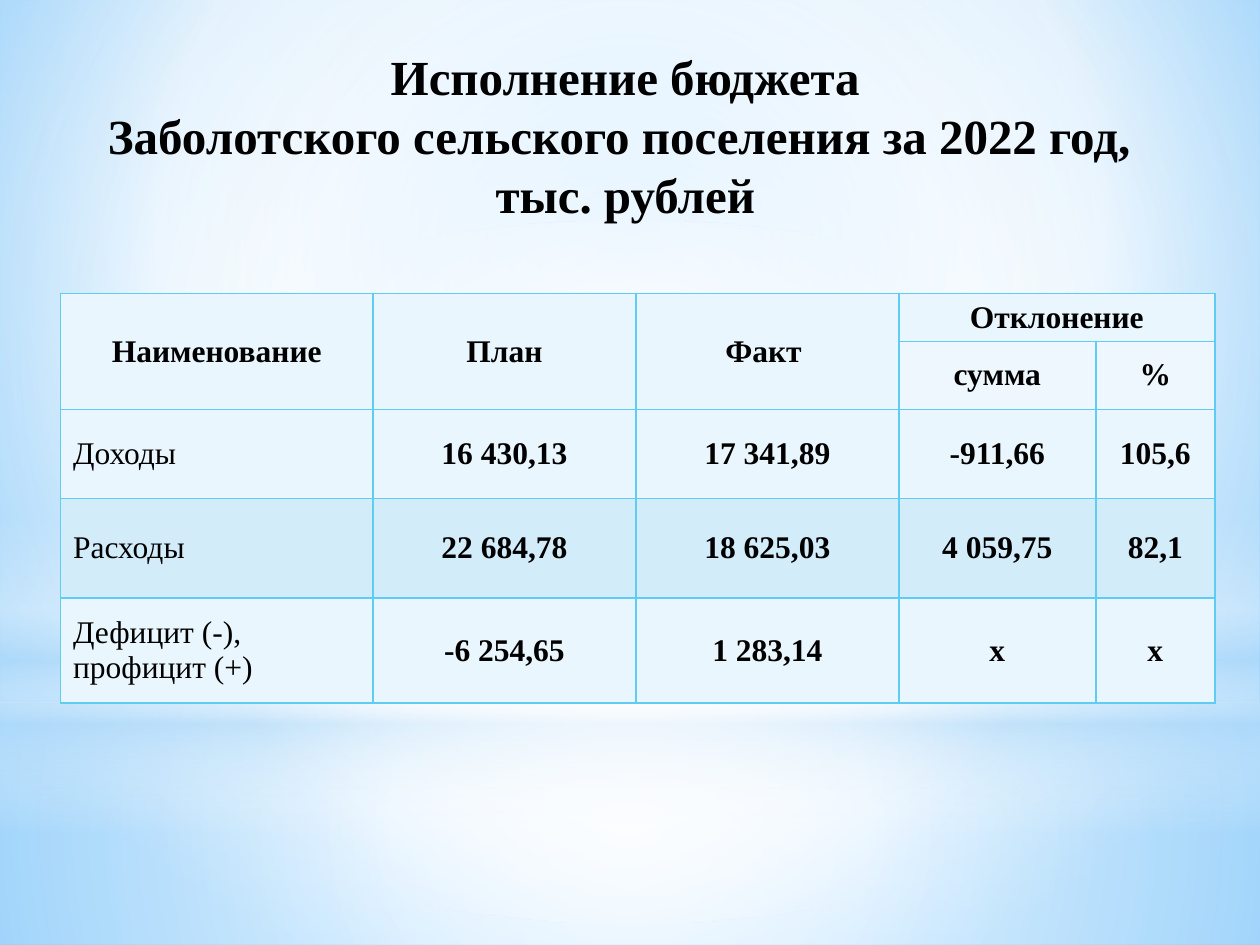
from dataclasses import dataclass
from itertools import product

from lxml import etree
from pptx import Presentation
from pptx import util as u
from pptx.dml.color import RGBColor
from pptx.enum import shapes, text
from pptx.oxml.ns import qn

COLORS = {
    "ink": "000000", "white": "FFFFFF", "haze": "B4DCFA", "sky": "9ED5FF",
    "azure": "5BB9FF", "border": "5ECCF3", "light": "EAF6FD",
    "subhead": "EDF7FD", "band": "D2ECFA",
}
FONT = "Times New Roman"
CENTER = (50, 50, 50, 50)


@dataclass(frozen=True)
class Stop:
    position: int
    color: str
    alpha: int = 100


@dataclass(frozen=True)
class Gradient:
    stops: tuple[Stop, ...]
    focus: tuple[int, ...] | None = CENTER


@dataclass(frozen=True)
class Glow:
    kind: shapes.MSO_SHAPE
    top: float
    height: float
    gradient: Gradient


@dataclass(frozen=True)
class Row:
    height: float
    fill: str
    values: tuple[str, ...]


BACKDROP = Gradient((Stop(0, "sky"), Stop(60, "white"), Stop(100, "azure")), (20, 10, 20, 60))
GLOWS = (
    Glow(shapes.MSO_SHAPE.RECTANGLE, 14.17, 4.88, Gradient(
        (Stop(0, "white", 91), Stop(37, "white", 76), Stop(100, "haze", 79)))),
    Glow(shapes.MSO_SHAPE.RECTANGLE, 0, 14.17, Gradient(
        (Stop(0, "white", 89), Stop(48, "white", 62), Stop(100, "haze", 79)))),
    Glow(shapes.MSO_SHAPE.RECTANGLE, 10.46, 6.35, Gradient(
        (Stop(0, "white", 0), Stop(29, "white", 30), Stop(45, "haze", 40),
         Stop(55, "white", 26), Stop(65, "haze", 60), Stop(100, "white", 0)), None)),
    Glow(shapes.MSO_SHAPE.OVAL, 4.45, 14.17, Gradient(
        (Stop(0, "white"), Stop(56, "white", 0)))),
)
COLUMNS = (6.3, 5.3, 5.3, 3.97, 2.4)
ROWS = (
    Row(0.96, "light", ("Наименование", "План", "Факт ", "Отклонение", "")),
    Row(1.37, "subhead", ("", "", "", "сумма", "%")),
    Row(1.8, "light", ("Доходы", "16 430,13", "17 341,89", "-911,66", "105,6")),
    Row(2.0, "band", ("Расходы", "22 684,78", "18 625,03", "4 059,75", "82,1")),
    Row(2.12, "light", ("Дефицит (-), профицит (+)", "-6 254,65", "1 283,14", "х", "х")),
)
HEADER_ROWS = 2
TITLE = ((" Исполнение бюджета ", "Заболотского сельского поселения за 2022 год, "),
         ("тыс. рублей",))


def add_color(parent, name: str, alpha: int = 100) -> None:
    """Append a colour with its opacity to a fill or gradient stop."""
    color = etree.SubElement(parent, qn("a:srgbClr"), val=COLORS[name])
    if alpha < 100:
        etree.SubElement(color, qn("a:alpha"), val=str(alpha * 1000))


def paint(fill, element, gradient: Gradient) -> None:
    """Give a fill the stops and direction of a gradient."""
    fill.gradient()
    node = element.find(".//" + qn("a:gradFill"))
    for child in list(node):
        node.remove(child)
    stops = etree.SubElement(node, qn("a:gsLst"))
    for stop in gradient.stops:
        add_color(etree.SubElement(stops, qn("a:gs"), pos=str(stop.position * 1000)),
                  stop.color, stop.alpha)
    if gradient.focus is None:
        etree.SubElement(node, qn("a:lin"), ang="5400000", scaled="0")
        return
    circle = etree.SubElement(node, qn("a:path"), {"path": "circle"})
    etree.SubElement(circle, qn("a:fillToRect"),
                     {side: str(inset * 1000) for side, inset in zip("ltrb", gradient.focus)})


def add_glow(slide, glow: Glow) -> None:
    """Draw one full-width translucent layer of the backdrop."""
    layer = slide.shapes.add_shape(glow.kind, 0, u.Cm(glow.top), u.Cm(25.4), u.Cm(glow.height))
    layer.shadow.inherit = False
    layer.line.fill.background()
    paint(layer.fill, layer.element, glow.gradient)


def add_run(paragraph, words: str, size: int, bold: bool = True) -> None:
    """Add one run in the slide's typeface."""
    run = paragraph.add_run()
    run.text = words
    run.font.name = FONT
    run.font.size = u.Pt(size)
    run.font.bold = bold
    run.font.color.rgb = RGBColor.from_string(COLORS["ink"])


def add_borders(cell) -> None:
    """Rule all four sides of a cell."""
    properties = cell._tc.get_or_add_tcPr()
    for index, side in enumerate(("lnL", "lnR", "lnT", "lnB")):
        line = etree.Element(qn(f"a:{side}"), w=str(u.Pt(1)))
        add_color(etree.SubElement(line, qn("a:solidFill")), "border")
        properties.insert(index, line)


def add_budget(slide) -> None:
    """Build the budget table with its merged two-row header."""
    budget = slide.shapes.add_table(
        len(ROWS), len(COLUMNS), u.Cm(1.22), u.Cm(5.92),
        u.Cm(sum(COLUMNS)), u.Cm(sum(row.height for row in ROWS))).table
    budget.first_row = budget.horz_banding = False
    for column, width in zip(budget.columns, COLUMNS):
        column.width = u.Cm(width)
    for line, row in zip(budget.rows, ROWS):
        line.height = u.Cm(row.height)
    for i, j in product(range(len(ROWS)), range(len(COLUMNS))):
        cell, row = budget.cell(i, j), ROWS[i]
        cell.fill.solid()
        cell.fill.fore_color.rgb = RGBColor.from_string(COLORS[row.fill])
        cell.vertical_anchor = text.MSO_ANCHOR.MIDDLE
        add_borders(cell)
        label = j == 0 and i >= HEADER_ROWS
        paragraph = cell.text_frame.paragraphs[0]
        paragraph.alignment = text.PP_ALIGN.LEFT if label else text.PP_ALIGN.CENTER
        if row.values[j]:
            add_run(paragraph, row.values[j], 18, not label)
    for j in range(3):
        budget.cell(0, j).merge(budget.cell(1, j))
    budget.cell(0, 3).merge(budget.cell(0, 4))


def add_title(slide) -> None:
    """Write the centred title."""
    frame = slide.shapes.add_textbox(u.Cm(0.3), u.Cm(0.84), u.Cm(24.61), u.Cm(3.76)).text_frame
    frame.word_wrap = True
    frame.vertical_anchor = text.MSO_ANCHOR.MIDDLE
    for i, lines in enumerate(TITLE):
        paragraph = frame.add_paragraph() if i else frame.paragraphs[0]
        paragraph.alignment = text.PP_ALIGN.CENTER
        for j, words in enumerate(lines):
            if j:
                paragraph.add_line_break()
            add_run(paragraph, words, 28)


def main() -> None:
    """Build and save the budget slide."""
    deck = Presentation()
    deck.slide_width, deck.slide_height = u.Cm(25.4), u.Cm(19.05)
    slide = deck.slides.add_slide(deck.slide_layouts[6])
    paint(slide.background.fill, slide.element, BACKDROP)
    for glow in GLOWS:
        add_glow(slide, glow)
    add_budget(slide)
    add_title(slide)
    deck.save("out.pptx")


if __name__ == "__main__":
    main()
